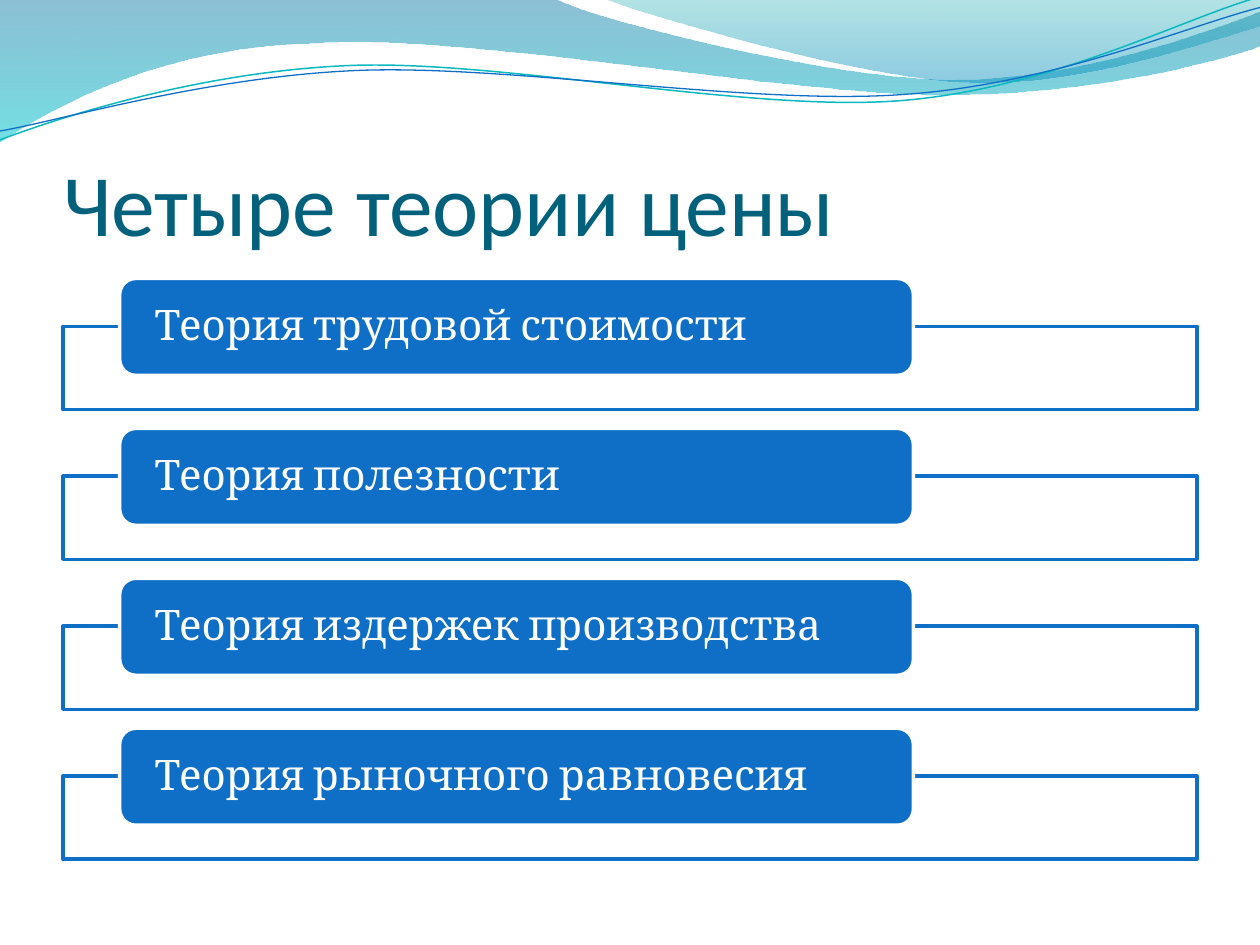
from dataclasses import dataclass
from math import cos, radians, sin

from lxml import etree
from pptx import Presentation
from pptx.dml.color import RGBColor
from pptx.enum.shapes import MSO_SHAPE
from pptx.enum.text import MSO_ANCHOR, MSO_AUTO_SIZE, PP_ALIGN
from pptx.oxml.ns import qn
from pptx.util import Inches, Pt

RECT, ROUND_RECT = MSO_SHAPE.RECTANGLE, MSO_SHAPE.ROUNDED_RECTANGLE
BOTTOM, MIDDLE = MSO_ANCHOR.BOTTOM, MSO_ANCHOR.MIDDLE
LEFT, NO_AUTOFIT = PP_ALIGN.LEFT, MSO_AUTO_SIZE.NONE
TITLE_ONLY = 5


@dataclass(frozen=True)
class Theme:
    title: str = "04617B"
    accent: str = "0F6FC6"
    teal: str = "0AB8BF"
    white: str = "FFFFFF"
    title_font: str = "Calibri"
    body_font: str = "Cambria"
    title_size: float = 50
    body_size: float = 24
    border: float = 2
    # Gradient stops: colour and opacity in percent
    wide_wave: tuple = (("0074A1", 45), ("00C6CF", 55))
    right_wave: tuple = (("00A1A9", 30), ("008BBF", 45))


THEME = Theme()

# Page grid in inches
WIDTH, HEIGHT = 10, 7.5
MARGIN = 0.05 * WIDTH
CONTENT_WIDTH = WIDTH - 2 * MARGIN
FIRST_ROW, ROW_PITCH = 2.21, 1.19
LABEL_LEFT, LABEL_HEIGHT = 0.95, 0.77
LABEL_WIDTH = 0.7 * CONTENT_WIDTH
FRAME_OFFSET, FRAME_HEIGHT = 0.38, 0.66
LINE_TILT = -2.7  # degrees

THEORIES = (
    "Теория трудовой стоимости",
    "Теория полезности",
    "Теория издержек производства",
    "Теория рыночного равновесия",
)

# Wave outlines: a pair is a straight step, six numbers are a cubic curve
WIDE_WAVE = (
    (0, 0), (4.4, -0.01),
    (4.76, 0.17, 6.64, 0.63, 7.58, 0.63), (8.53, 0.63, 9.58, 0.26, 10, 0.09),
    (10.01, 0.36),
    (9.83, 0.44, 8.7, 0.76, 7.46, 0.75), (6.22, 0.75, 3.82, 0.28, 2.57, 0.34),
    (1.29, 0.36, 0.46, 0.83, -0.01, 1.13), (0, 0),
)
RIGHT_WAVE = (
    (4.79, -0.01),
    (5.09, 0.11, 6.82, 0.62, 7.69, 0.65), (8.56, 0.69, 9.61, 0.32, 10, 0.21),
    (10, 0), (4.79, -0.01),
)
TEAL_LINE = (
    (0, 1.11),
    (0.48, 0.93, 1.58, 0.57, 2.77, 0.52), (3.95, 0.47, 5.93, 0.89, 7.13, 0.8),
    (8.33, 0.71, 9.38, 0.15, 9.98, -0.02),
)
BLUE_LINE = (
    (0, 1.04),
    (0.47, 0.96, 1.64, 0.61, 2.83, 0.56), (4.03, 0.51, 5.97, 0.84, 7.17, 0.75),
    (8.36, 0.67, 9.41, 0.21, 10, 0.06),
)


def rgb(value):
    return RGBColor.from_string(value)


def set_opacity(parent, percents):
    """Give each colour below parent its opacity."""
    for color, percent in zip(parent.iter(qn("a:srgbClr")), percents):
        etree.SubElement(color, qn("a:alpha")).set("val", str(percent * 1000))


def rotate(step, center, degrees):
    """Turn every point of a step about the center."""
    c, s = cos(radians(degrees)), sin(radians(degrees))
    turned = []
    for x, y in zip(step[::2], step[1::2]):
        dx, dy = x - center[0], y - center[1]
        turned += [center[0] + c * dx - s * dy, center[1] + s * dx + c * dy]
    return tuple(turned)


def add_outline(slide, steps, closed):
    """Draw all points as a polyline, then join each curve's three points."""
    points = [(Inches(x), Inches(y))
              for step in steps for x, y in zip(step[::2], step[1::2])]
    builder = slide.shapes.build_freeform(*points[0])
    builder.add_line_segments(points[1:], close=closed)
    outline = builder.convert_to_shape()
    outline.shadow.inherit = False

    segments = iter(list(outline._element.spPr.iter(qn("a:lnTo"))))
    for step in steps[1:]:
        first = next(segments)
        if len(step) == 6:
            first.tag = qn("a:cubicBezTo")
            for _ in range(2):
                following = next(segments)
                first.append(following[0])
                following.getparent().remove(following)
    return outline


def add_wave(slide, steps, stops):
    wave = add_outline(slide, steps, closed=True)
    wave.line.fill.background()
    wave.fill.gradient()
    wave.fill.gradient_angle = 270
    for position, (stop, (color, _)) in enumerate(zip(wave.fill.gradient_stops, stops)):
        stop.position = position
        stop.color.rgb = rgb(color)
    set_opacity(wave._element.spPr, [opacity for _, opacity in stops])


def add_wave_line(slide, steps, center, color, width):
    level_steps = [rotate(step, center, -LINE_TILT) for step in steps]
    curve = add_outline(slide, level_steps, closed=False)
    curve.rotation = LINE_TILT
    curve.fill.background()
    curve.line.color.rgb = rgb(color)
    curve.line.width = Pt(width)


def add_box(slide, preset, left, top, width, height, fill, line):
    box = slide.shapes.add_shape(
        preset, Inches(left), Inches(top), Inches(width), Inches(height))
    box.shadow.inherit = False
    box.fill.solid()
    box.fill.fore_color.rgb = rgb(fill)
    box.line.color.rgb = rgb(line)
    box.line.width = Pt(THEME.border)
    return box


def write(shape, text, *, font, size, color, anchor, insets, spacing=1.0):
    frame = shape.text_frame
    frame.word_wrap = True
    frame.auto_size = NO_AUTOFIT
    frame.vertical_anchor = anchor
    (frame.margin_left, frame.margin_top,
     frame.margin_right, frame.margin_bottom) = map(Inches, insets)
    paragraph = frame.paragraphs[0]
    paragraph.alignment = LEFT
    paragraph.line_spacing = spacing
    run = paragraph.add_run()
    run.text = text
    run.font.name = font
    run.font.size = Pt(size)
    run.font.color.rgb = rgb(color)


def add_title(slide, text):
    title = slide.shapes.title
    title.left, title.top = Inches(MARGIN), Inches(0.77)
    title.width, title.height = Inches(CONTENT_WIDTH), Inches(1.25)
    write(title, text, font=THEME.title_font, size=THEME.title_size,
          color=THEME.title, anchor=BOTTOM, insets=(0, 0.05, 0, 0))


def add_theory(slide, row, text):
    """One list row: an outlined frame with a label over its top edge."""
    top = FIRST_ROW + row * ROW_PITCH
    frame = add_box(slide, RECT, MARGIN, top + FRAME_OFFSET, CONTENT_WIDTH,
                    FRAME_HEIGHT, THEME.white, THEME.accent)
    set_opacity(frame._element.spPr, [90])
    label = add_box(slide, ROUND_RECT, LABEL_LEFT, top, LABEL_WIDTH,
                    LABEL_HEIGHT, THEME.accent, THEME.white)
    write(label, text, font=THEME.body_font, size=THEME.body_size,
          color=THEME.white, anchor=MIDDLE, insets=(0.24, 0, 0.24, 0), spacing=0.9)


def main():
    deck = Presentation()
    deck.slide_width, deck.slide_height = Inches(WIDTH), Inches(HEIGHT)
    slide = deck.slides.add_slide(deck.slide_layouts[TITLE_ONLY])

    # Waves along the top edge
    add_wave(slide, WIDE_WAVE, THEME.wide_wave)
    add_wave(slide, RIGHT_WAVE, THEME.right_wave)
    add_wave_line(slide, TEAL_LINE, (4.99, 0.57), THEME.teal, 0.85)
    add_wave_line(slide, BLUE_LINE, (5, 0.59), THEME.accent, 0.75)

    # Title and the list of theories
    add_title(slide, "Четыре теории цены")
    for row, theory in enumerate(THEORIES):
        add_theory(slide, row, theory)

    deck.save("out.pptx")


if __name__ == "__main__":
    main()
